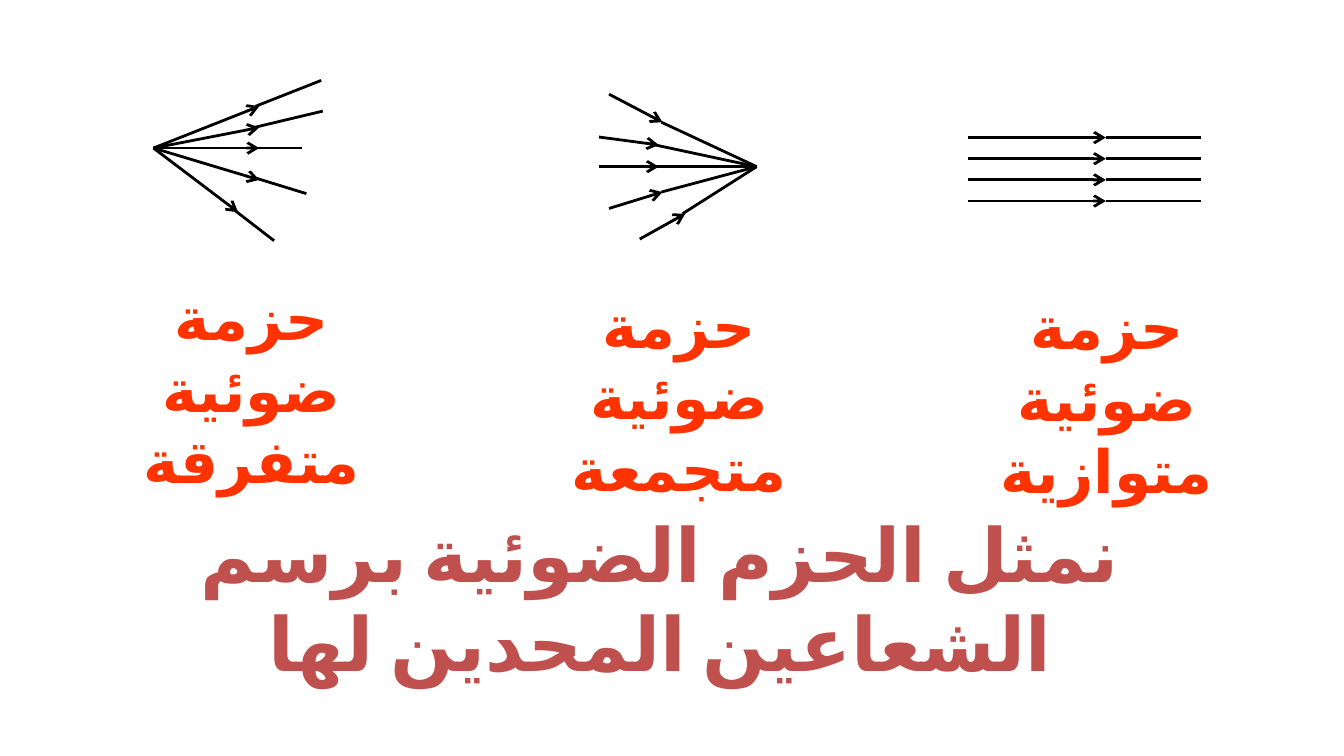
"""Build a slide on diverging, converging and parallel light beams."""
from lxml.etree import SubElement
from pptx import Presentation
from pptx.dml.color import RGBColor
from pptx.enum.lang import MSO_LANGUAGE_ID as Language
from pptx.enum.shapes import MSO_CONNECTOR as Connector
from pptx.enum.text import MSO_ANCHOR as Anchor, MSO_AUTO_SIZE as AutoSize, PP_ALIGN as Align
from pptx.oxml.ns import qn
from pptx.util import Cm, Pt

BLACK = RGBColor(0x00, 0x00, 0x00)
ORANGE = RGBColor(0xFF, 0x33, 0x00)
BRICK = RGBColor(0xC0, 0x50, 0x4D)
FONT = "Calibri"


def write_text(box, text, size, color):
    frame = box.text_frame
    frame.word_wrap = True
    frame.vertical_anchor = Anchor.TOP
    para = frame.paragraphs[0]
    para.alignment = Align.CENTER
    para._p.get_or_add_pPr().set("rtl", "1")
    span = para.add_run()
    span.text = text
    span.font.name = FONT
    span.font.size = Pt(size)
    span.font.bold = True
    span.font.color.rgb = color
    span.font.language_id = Language.ARABIC_ALGERIA
    SubElement(span._r.get_or_add_rPr(), qn("a:cs"), typeface=FONT)


def draw_ray(page, start, end, arrow=False):
    ray = page.shapes.add_connector(
        Connector.STRAIGHT, Cm(start[0]), Cm(start[1]), Cm(end[0]), Cm(end[1]))
    ray.line.color.rgb = BLACK
    ray.line.width = Pt(1.5)
    properties = ray._element.spPr
    if arrow:
        SubElement(properties.find(qn("a:ln")), qn("a:tailEnd"), type="arrow")
    SubElement(properties, qn("a:effectLst"))


deck = Presentation()
deck.slide_width, deck.slide_height = Cm(25.4), Cm(14.29)
page = deck.slides.add_slide(deck.slide_layouts[5])

title = page.shapes.title
title.left, title.top, title.width, title.height = Cm(1.04), Cm(9.47), Cm(22.86), Cm(2.39)
title.text_frame.auto_size = AutoSize.NONE
write_text(title, "نمثل الحزم الضوئية برسم الشعاعين المحدين لها", 40, BRICK)

labels = [
    ("حزمة ضوئية متفرقة", 5.18),
    ("حزمة ضوئية متجمعة", 5.33),
    ("حزمة ضوئية متوازية", 5.36),
]
for column, (text, top) in enumerate(labels):
    box = page.shapes.add_textbox(Cm(1.96 + 8.08 * column), Cm(top), Cm(5.59), Cm(3))
    write_text(box, text, 32, ORANGE)
    box.text_frame.auto_size = AutoSize.SHAPE_TO_FIT_TEXT

source = (2.9, 2.8)
diverging = [
    ((4.9, 2.01), (4.83, 2.01), (6.07, 1.52)),
    ((4.9, 2.41), (4.8, 2.41), (6.1, 2.1)),
    ((4.9, 2.8), (4.78, 2.8), (5.7, 2.8)),
    ((4.9, 3.4), (4.78, 3.35), (5.79, 3.66)),
    ((4.5, 4.01), (4.39, 3.94), (5.18, 4.55)),
]
for tip, start, end in diverging:
    draw_ray(page, source, tip, arrow=True)
    draw_ray(page, start, end)

focus = (14.3, 3.15)
converging = [
    ((11.51, 1.78), (12.52, 2.31), (12.5, 2.31)),
    ((11.32, 2.59), (12.45, 2.74), (12.29, 2.72)),
    ((11.32, 3.15), (12.45, 3.15), (12.29, 3.15)),
    ((11.51, 3.94), (12.52, 3.63), (12.5, 3.63)),
    ((12.09, 4.52), (12.95, 4.04), (12.9, 4.04)),
]
for origin, tip, start in converging:
    draw_ray(page, origin, tip, arrow=True)
    draw_ray(page, start, focus)

for row in range(4):
    height = 2.6 + 0.4 * row
    draw_ray(page, (18.3, height), (20.9, height), arrow=True)
    draw_ray(page, (20.9, height), (22.7, height))

deck.save("out.pptx")
